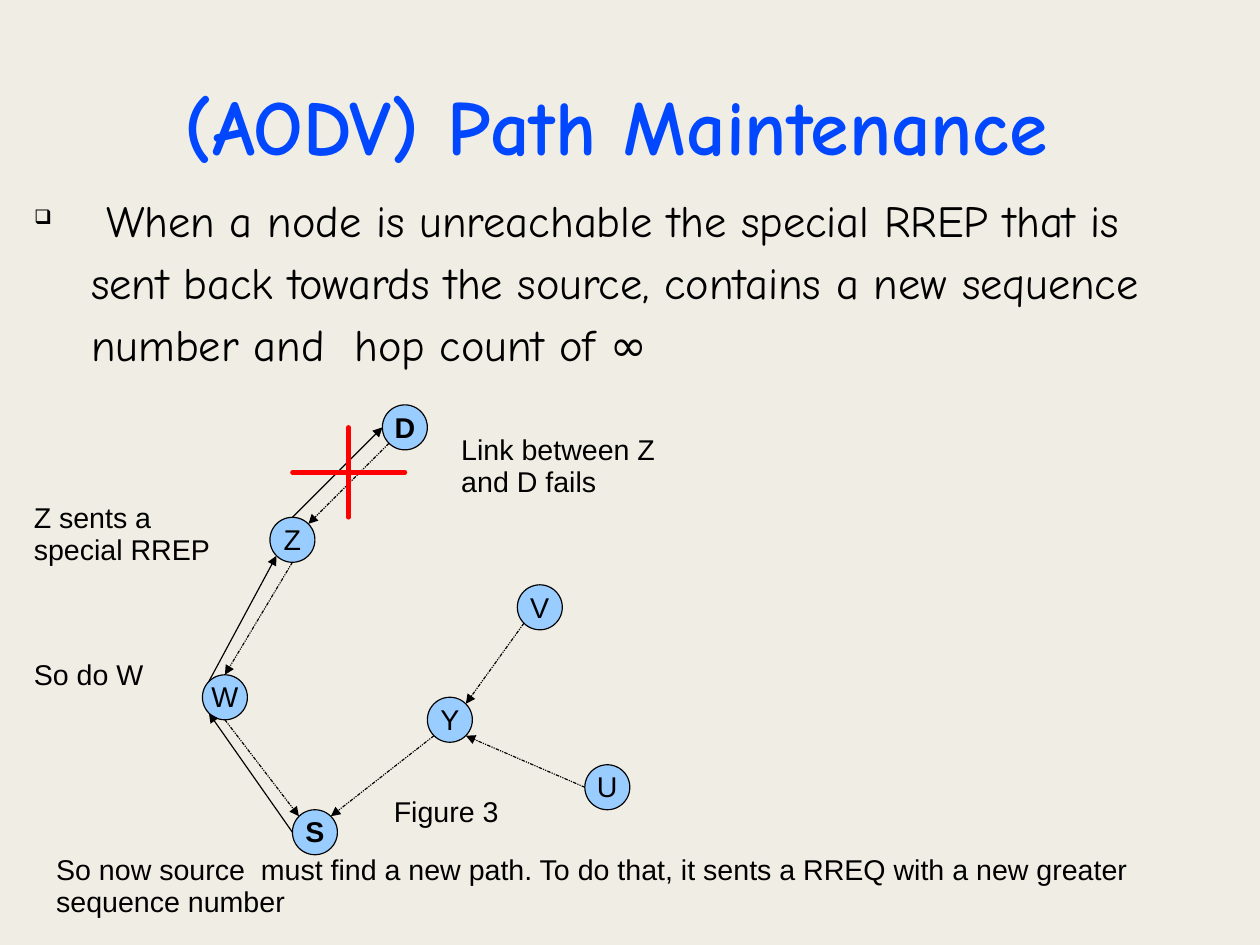
from pptx import Presentation
from pptx.dml.color import RGBColor
from pptx.enum.dml import MSO_LINE_DASH_STYLE as Dash
from pptx.enum.shapes import MSO_CONNECTOR as Link, MSO_SHAPE as Kind
from pptx.enum.text import MSO_ANCHOR as Anchor, PP_ALIGN as Align
from pptx.util import Pt
from lxml import etree

BLACK = RGBColor(0x00, 0x00, 0x00)
BLUE = RGBColor(0x00, 0x47, 0xFF)
SKY = RGBColor(0x99, 0xCC, 0xFF)
RED = RGBColor(0xFF, 0x00, 0x00)
SAND = RGBColor(0xF0, 0xEE, 0xE4)
UNIT = 14.17  # grid step of the network, in points
NS = "{http://schemas.openxmlformats.org/drawingml/2006/main}"

deck = Presentation()
deck.slide_width, deck.slide_height = Pt(793.7), Pt(595.3)
slide = deck.slides.add_slide(deck.slide_layouts[6])
slide.background.fill.solid()
slide.background.fill.fore_color.rgb = SAND
shapes = slide.shapes


def write(shape, text, size=18, font="Arial", color=BLACK, bold=False,
          space=0.93, pads=(7.2, 5, 7.2, 3.6), wrap=True):
    frame = shape.text_frame
    frame.word_wrap = wrap
    frame.margin_left, frame.margin_top, frame.margin_right, frame.margin_bottom = map(Pt, pads)
    para = frame.paragraphs[0]
    para.line_spacing = space
    run = para.add_run()
    run.text = text
    run.font.size, run.font.name, run.font.bold = Pt(size), font, bold
    run.font.color.rgb = color
    return frame, para


# Title
box = shapes.add_textbox(Pt(39.6), Pt(23.8), Pt(714.2), Pt(99.4))
frame, para = write(box, "(AODV) Path Maintenance ", 49, "Comic Neue", BLUE, True,
                    1.16, (7.9, 4.3, 7.9, 4.3))
frame.vertical_anchor = Anchor.MIDDLE
para.alignment = Align.CENTER

# Bulleted statement
box = shapes.add_textbox(Pt(14.4), Pt(113), Pt(737.3), Pt(464.4))
frame, para = write(
    box, " When a node is unreachable the special RREP that is sent back towards "
    "the source, contains a new sequence number and  hop count of ∞",
    28, "Comic Neue", space=1.16, pads=(7.2, 3.6, 7.2, 3.6))
props = para._p.get_or_add_pPr()
props.set("marL", str(Pt(36)))
props.set("indent", str(-Pt(36)))
tint = etree.SubElement(props, NS + "buClr")
etree.SubElement(tint, NS + "srgbClr", val=str(BLACK))
etree.SubElement(props, NS + "buSzPct", val="45000")
etree.SubElement(props, NS + "buChar", char="❑")

# Network nodes: column and row on the grid
nodes = {"U": (26, 34), "D": (17, 18), "Y": (19, 31), "S": (13, 36),
         "V": (23, 26), "Z": (12, 23), "W": (9, 30)}
for name, (col, row) in nodes.items():
    node = shapes.add_shape(Kind.OVAL, Pt(col * UNIT), Pt(row * UNIT),
                            Pt(2 * UNIT), Pt(2 * UNIT))
    node.shadow.inherit = False
    node.fill.solid()
    node.fill.fore_color.rgb = SKY
    node.line.color.rgb = BLACK
    node.line.width = Pt(0.75)
    frame, para = write(node, name, bold=name in "DS", wrap=False)
    frame.vertical_anchor = Anchor.MIDDLE
    para.alignment = Align.CENTER

# Points on a node's rim, in grid steps from its corner
rim = {"top": (1, 0), "left": (0, 1), "base": (1, 2),
       "nw": (0.29, 0.29), "ne": (1.71, 0.29), "sw": (0.29, 1.71), "se": (1.71, 1.71)}


def spot(name, side):
    return [Pt((a + b) * UNIT) for a, b in zip(nodes[name], rim[side])]


# Arrows: start, end, dashed
arrows = [
    ("W", "base", "S", "nw", True), ("Y", "sw", "S", "ne", True),
    ("Z", "base", "W", "top", True), ("V", "sw", "Y", "ne", True),
    ("U", "left", "Y", "se", True), ("D", "sw", "Z", "ne", True),
    ("Z", "top", "D", "left", False), ("W", "nw", "Z", "sw", False),
    ("S", "left", "W", "sw", False),
]
for start, out, end, into, dashed in arrows:
    arrow = shapes.add_connector(Link.STRAIGHT, *spot(start, out), *spot(end, into))
    arrow.line.color.rgb = BLACK
    arrow.line.width = Pt(0.75)
    if dashed:
        arrow.line.dash_style = Dash.DASH_DOT_DOT
        arrow.line._ln.find(NS + "prstDash").set("val", "sysDashDotDot")
    etree.SubElement(arrow.line._ln, NS + "tailEnd", type="triangle")
    etree.SubElement(arrow._element.spPr, NS + "effectLst")

# Red cross on the broken link
mid = (15.5, 21)
tips = [(15.5, 19), mid, (13, 21), mid, (15.5, 23), mid, (18, 21), mid]
dots = [(Pt(x * UNIT), Pt(y * UNIT)) for x, y in tips]
path = shapes.build_freeform(*dots[0])
path.add_line_segments(dots[1:], close=True)
cross = path.convert_to_shape()
cross.shadow.inherit = False
cross.fill.solid()
cross.fill.fore_color.rgb = SKY
cross.line.color.rgb = RED
cross.line.width = Pt(2.83)

# Captions
notes = [
    ("Figure 3", 241, 496.8, 184.3, 27.4),
    ("Link between Z and D fails", 283.5, 269.3, 141.8, 47.5),
    ("Z sents a special RREP", 14.2, 311.8, 141.8, 47.5),
    ("So do W", 14.2, 411, 99.4, 27.4),
    ("So now source  must find a new path. To do that, it sents a RREQ with "
     "a new greater sequence number", 28.3, 533.5, 737.3, 47.5),
]
for text, *area in notes:
    write(shapes.add_textbox(*map(Pt, area)), text)

deck.save("out.pptx")
